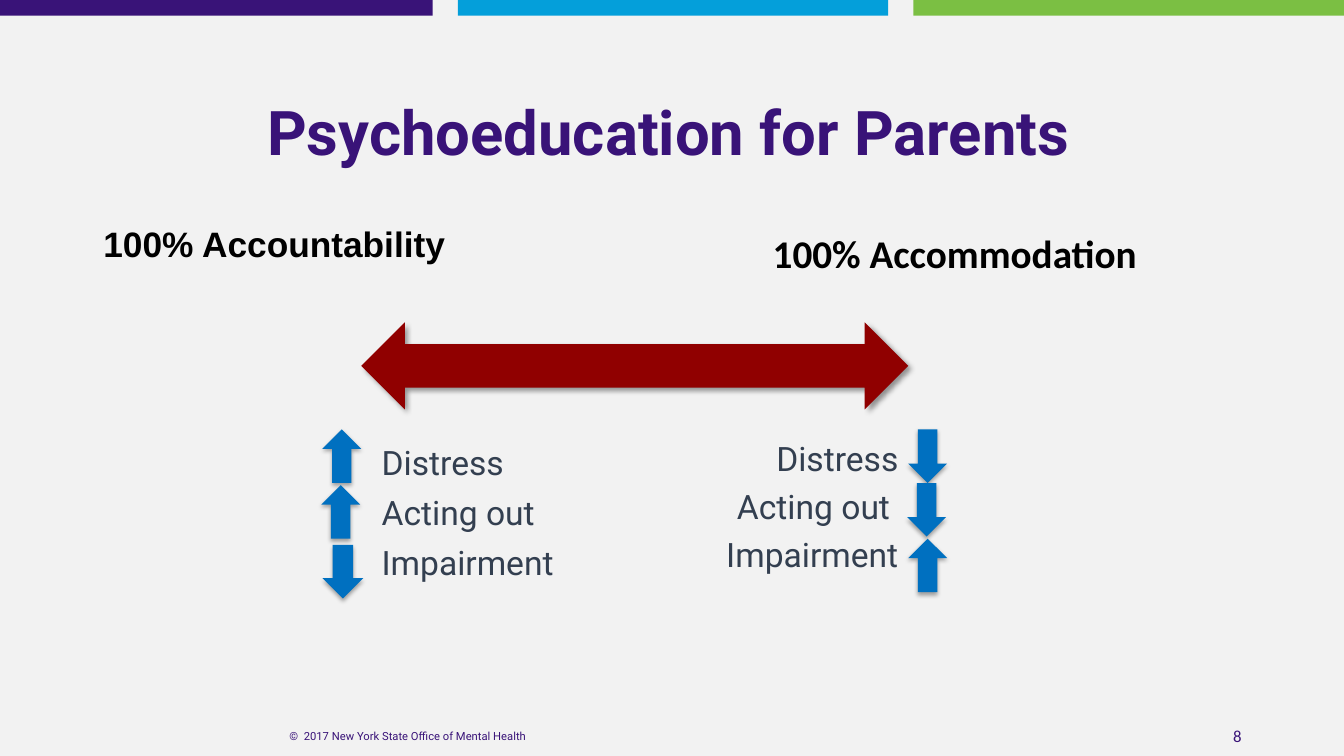
from lxml.etree import SubElement
from pptx import Presentation
from pptx.dml.color import RGBColor
from pptx.enum.shapes import MSO_SHAPE as SHAPE
from pptx.enum.text import MSO_ANCHOR as ANCHOR, PP_ALIGN as ALIGN
from pptx.oxml.ns import qn
from pptx.util import Emu, Pt

PX = 9525  # EMU per px, 96 px to the inch


class Theme:
    page, purple, blue, green = "F2F2F2", "391378", "049FDA", "7BBF43"
    red, arrow, body, black = "900000", "0070C0", "333F50", "000000"
    title_size, accommodation_size, accountability_size = 44, 28, 25.2
    list_size, number_size, footer_size = 24, 12, 8


def add_block(kind, place, color, shadow=None, rotation=0):
    """Filled shape; shadow is (opacity %, blur pt, distance pt, degrees)."""
    block = page.shapes.add_shape(kind, *[Emu(n * PX) for n in place])
    block.fill.solid()
    block.fill.fore_color.rgb = RGBColor.from_string(color)
    block.line.fill.background()
    block.shadow.inherit = False
    block.rotation = rotation
    if shadow:
        opacity, blur, distance, degrees = shadow
        effects = block.element.spPr.find(qn("a:effectLst"))
        outer = SubElement(effects, qn("a:outerShdw"), blurRad=str(Pt(blur)),
                           dist=str(Pt(distance)), dir=str(degrees * 60000),
                           rotWithShape="0")
        tint = SubElement(outer, qn("a:srgbClr"), val=Theme.black)
        SubElement(tint, qn("a:alpha"), val=str(opacity * 1000))


def add_text(text, place, font, size, color, align=ALIGN.LEFT, bold=False,
             anchor=ANCHOR.TOP, line_spacing=1.0, gap=0):
    box = page.shapes.add_textbox(*[Emu(n * PX) for n in place])
    frame = box.text_frame
    frame.word_wrap = True
    frame.vertical_anchor = anchor
    frame.text = text
    for index, para in enumerate(frame.paragraphs):
        para.alignment = align
        para.line_spacing = line_spacing
        if index:
            para.space_before = Pt(gap)
        for span in para.runs:
            span.font.name = font
            span.font.size = Pt(size)
            span.font.bold = bold
            span.font.color.rgb = RGBColor.from_string(color)


deck = Presentation()
deck.slide_width, deck.slide_height = Emu(1280 * PX), Emu(720 * PX)
page = deck.slides.add_slide(deck.slide_layouts[6])
page.background.fill.solid()
page.background.fill.fore_color.rgb = RGBColor.from_string(Theme.page)

# Colour bars along the top edge
for left, width, color in [(0, 412, Theme.purple), (436, 410, Theme.blue),
                           (870, 410, Theme.green)]:
    add_block(SHAPE.RECTANGLE, (left, 0, width, 15), color)

# Footer
add_text("8", (904, 682, 288, 38), "Calibri", Theme.number_size, Theme.purple,
         ALIGN.RIGHT, anchor=ANCHOR.MIDDLE)
add_text("©  2017 New York State Office of Mental Health", (174, 682, 429, 38),
         "Roboto", Theme.footer_size, Theme.purple, ALIGN.CENTER,
         anchor=ANCHOR.MIDDLE)

# Title and the two ends of the scale
add_text("Psychoeducation for Parents", (207, 85, 860, 203), "Roboto",
         Theme.title_size, Theme.purple, ALIGN.CENTER, bold=True)
add_text("100% Accountability", (89, 211, 473, 129), "Arial",
         Theme.accountability_size, Theme.black, bold=True, line_spacing=0.9)
add_text("100% Accommodation", (673, 214, 419, 97), "Calibri",
         Theme.accommodation_size, Theme.black, ALIGN.RIGHT, bold=True)
add_block(SHAPE.LEFT_RIGHT_ARROW, (344, 307, 521, 83), Theme.red,
          shadow=(40, 4, 3, 45))

# Effects under each end
add_text("Distress\nActing out\nImpairment", (354, 420, 224, 173), "Roboto",
         Theme.list_size, Theme.body, line_spacing=0.9, gap=10)
add_text("Distress\nActing out \nImpairment", (637, 412, 228, 199), "Roboto",
         Theme.list_size, Theme.body, ALIGN.RIGHT, gap=5.5)

# Rise and fall arrows beside the effects
UP, DOWN = 0, 180
for left, top, width, turn in [
    (307, 409, 37, UP), (306, 462, 37, UP), (307, 519, 39, DOWN),
    (865, 409, 37, DOWN), (864, 460, 37, DOWN), (865, 513, 37, UP),
]:
    add_block(SHAPE.UP_ARROW, (left, top, width, 51), Theme.arrow,
              shadow=(35, 3.1, 1.8, 90), rotation=turn)

deck.save("out.pptx")
